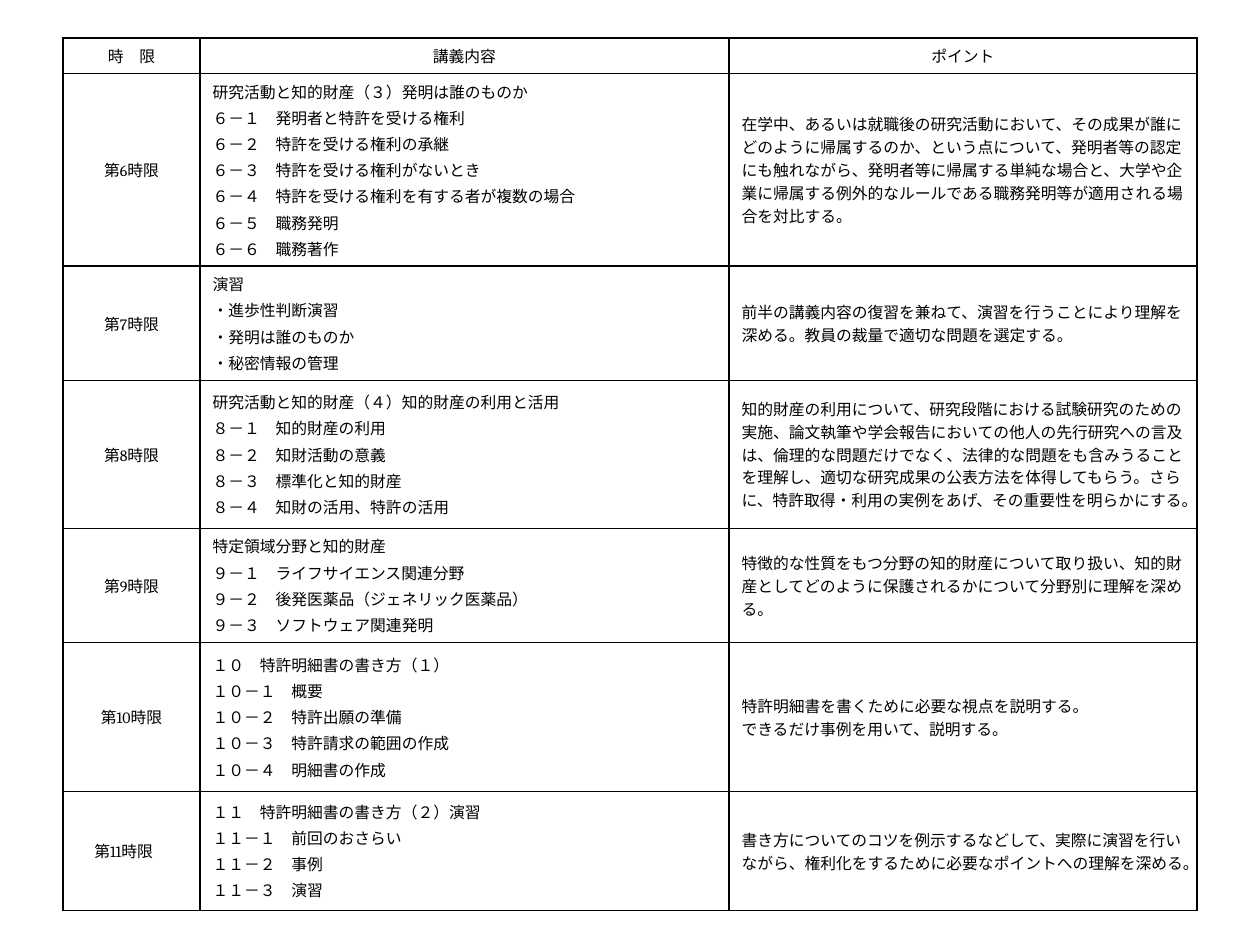
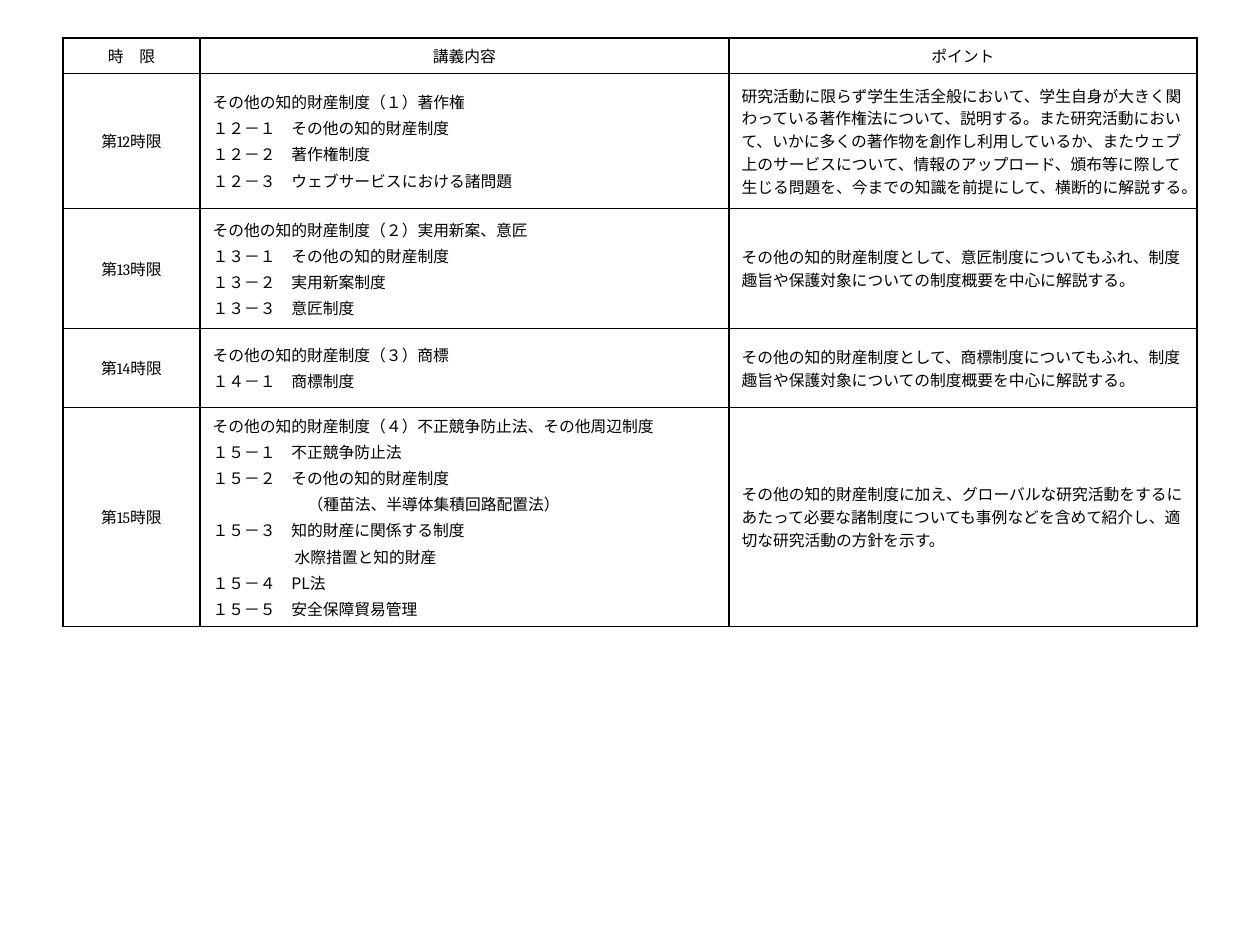
from dataclasses import dataclass

from lxml.etree import SubElement
from pptx import Presentation
from pptx.dml.color import RGBColor
from pptx.enum.lang import MSO_LANGUAGE_ID
from pptx.enum.text import MSO_ANCHOR, PP_ALIGN
from pptx.oxml.ns import qn
from pptx.slide import Slide
from pptx.table import _Cell
from pptx.util import Emu, Pt

SCALE = 914400 // 126
COLORS = {"ink": "000000", "rule": "000000"}
SERIF, SANS, ASIAN = "Cambria", "Calibri", "Noto Sans CJK JP"
SIZE = Pt(9)
GAP = Pt(1.9)
RULE = Pt(1)
HANG = 48
LEFT, TOP = 63, 38
COLS = (137, 529, 468)
HEAD = 35
TITLES = ("時　限", "講義内容", "ポイント")


@dataclass(frozen=True)
class Line:
    text: str
    inset: int = 0


@dataclass(frozen=True)
class Style:
    face: str
    align: PP_ALIGN = PP_ALIGN.LEFT
    hang: int = 0
    gap: Emu | None = None


@dataclass(frozen=True)
class Term:
    high: int
    name: str
    topics: tuple[str | Line, ...]
    points: tuple[str, ...]
    face: str = SANS


LABEL = Style(SERIF, PP_ALIGN.CENTER, HANG)
POINT = Style(SERIF)

FIRST = (
    Term(192, "第6時限", (
        "研究活動と知的財産（３）発明は誰のものか",
        "６－１　発明者と特許を受ける権利",
        "６－２　特許を受ける権利の承継",
        "６－３　特許を受ける権利がないとき",
        "６－４　特許を受ける権利を有する者が複数の場合",
        "６－５　職務発明",
        "６－６　職務著作",
    ), (
        "在学中、あるいは就職後の研究活動において、その成果が誰に"
        "どのように帰属するのか、という点について、発明者等の認定"
        "にも触れながら、発明者等に帰属する単純な場合と、大学や企"
        "業に帰属する例外的なルールである職務発明等が適用される場"
        "合を対比する。",
    )),
    Term(114, "第7時限", (
        "演習",
        "・進歩性判断演習",
        "・発明は誰のものか",
        "・秘密情報の管理",
    ), (
        "前半の講義内容の復習を兼ねて、演習を行うことにより理解を"
        "深める。教員の裁量で適切な問題を選定する。",
    )),
    Term(148, "第8時限", (
        "研究活動と知的財産（４）知的財産の利用と活用",
        "８－１　知的財産の利用",
        "８－２　知財活動の意義",
        "８－３　標準化と知的財産",
        "８－４　知財の活用、特許の活用",
    ), (
        "知的財産の利用について、研究段階における試験研究のための"
        "実施、論文執筆や学会報告においての他人の先行研究への言及"
        "は、倫理的な問題だけでなく、法律的な問題をも含みうること"
        "を理解し、適切な研究成果の公表方法を体得してもらう。さら"
        "に、特許取得・利用の実例をあげ、その重要性を明らかにする。",
    )),
    Term(114, "第9時限", (
        "特定領域分野と知的財産",
        "９－１　ライフサイエンス関連分野",
        "９－２　後発医薬品（ジェネリック医薬品）",
        "９－３　ソフトウェア関連発明",
    ), (
        "特徴的な性質をもつ分野の知的財産について取り扱い、知的財"
        "産としてどのように保護されるかについて分野別に理解を深め"
        "る。",
    )),
    Term(149, "第10時限", (
        "１０　特許明細書の書き方（１）",
        "１０－１　概要",
        "１０－２　特許出願の準備",
        "１０－３　特許請求の範囲の作成",
        "１０－４　明細書の作成",
    ), (
        "特許明細書を書くために必要な視点を説明する。",
        "できるだけ事例を用いて、説明する。",
    )),
    Term(119, "第11時限　", (
        "１１　特許明細書の書き方（２）演習",
        "１１－１　前回のおさらい",
        "１１－２　事例",
        "１１－３　演習",
    ), (
        "書き方についてのコツを例示するなどして、実際に演習を行い"
        "ながら、権利化をするために必要なポイントへの理解を深める。",
    )),
)

SECOND = (
    Term(135, "第12時限", (
        "その他の知的財産制度（１）著作権",
        "１２－１　その他の知的財産制度",
        "１２－２　著作権制度",
        "１２－３　ウェブサービスにおける諸問題",
    ), (
        "研究活動に限らず学生生活全般において、学生自身が大きく関"
        "わっている著作権法について、説明する。また研究活動におい"
        "て、いかに多くの著作物を創作し利用しているか、またウェブ"
        "上のサービスについて、情報のアップロード、頒布等に際して"
        "生じる問題を、今までの知識を前提にして、横断的に解説する。",
    )),
    Term(120, "第13時限", (
        "その他の知的財産制度（２）実用新案、意匠",
        "１３－１　その他の知的財産制度",
        "１３－２　実用新案制度",
        "１３－３　意匠制度",
    ), (
        "その他の知的財産制度として、意匠制度についてもふれ、制度"
        "趣旨や保護対象についての制度概要を中心に解説する。",
    )),
    Term(79, "第14時限", (
        "その他の知的財産制度（３）商標",
        "１４－１　商標制度",
    ), (
        "その他の知的財産制度として、商標制度についてもふれ、制度"
        "趣旨や保護対象についての制度概要を中心に解説する。",
    )),
    Term(219, "第15時限", (
        "その他の知的財産制度（４）不正競争防止法、その他周辺制度",
        "１５－１　不正競争防止法",
        "１５－２　その他の知的財産制度",
        Line("（種苗法、半導体集積回路配置法）", 95),
        "１５－３　知的財産に関係する制度",
        Line("水際措置と知的財産", 82),
        "１５－４　PL法",
        "１５－５　安全保障貿易管理",
    ), (
        "その他の知的財産制度に加え、グローバルな研究活動をするに"
        "あたって必要な諸制度についても事例などを含めて紹介し、適"
        "切な研究活動の方針を示す。",
    ), ASIAN),
)


def px(count: int) -> Emu:
    return Emu(count * SCALE)


def frame(cell: _Cell) -> None:
    props = cell._tc.get_or_add_tcPr()
    for side in "LRTB":
        edge = SubElement(props, qn(f"a:ln{side}"), w=str(RULE))
        fill = SubElement(edge, qn("a:solidFill"))
        SubElement(fill, qn("a:srgbClr"), val=COLORS["rule"])
    cell.fill.background()


def write(cell: _Cell, lines: tuple[str | Line, ...], style: Style) -> None:
    cell.vertical_anchor = MSO_ANCHOR.MIDDLE
    body = cell.text_frame
    for index, item in enumerate(lines):
        line = item if isinstance(item, Line) else Line(item)
        para = body.add_paragraph() if index else body.paragraphs[0]
        para.alignment = style.align
        if style.gap is not None:
            para.space_before = style.gap
        props = para._p.get_or_add_pPr()
        props.set("marL", str(px(line.inset or style.hang)))
        props.set("indent", str(px(0 if line.inset else -style.hang)))
        run = para.add_run()
        run.text = line.text
        font = run.font
        font.size = SIZE
        font.name = style.face
        font.language_id = MSO_LANGUAGE_ID.JAPANESE
        font.color.rgb = RGBColor.from_string(COLORS["ink"])
        SubElement(run._r.get_or_add_rPr(), qn("a:ea"), typeface=ASIAN)


def draw(slide: Slide, terms: tuple[Term, ...]) -> None:
    highs = (HEAD, *(term.high for term in terms))
    grid = slide.shapes.add_table(
        len(highs), len(COLS), px(LEFT), px(TOP), px(sum(COLS)), px(sum(highs))
    ).table
    grid.first_row = grid.horz_banding = False
    for col, wide in zip(grid.columns, COLS):
        col.width = px(wide)
    for row, high in zip(grid.rows, highs):
        row.height = px(high)
    for cell in grid.iter_cells():
        frame(cell)
    for col, title in enumerate(TITLES):
        write(grid.cell(0, col), (title,), LABEL)
    for row, term in enumerate(terms, 1):
        topic = Style(term.face, hang=HANG, gap=GAP)
        write(grid.cell(row, 0), (term.name,), LABEL)
        write(grid.cell(row, 1), term.topics, topic)
        write(grid.cell(row, 2), term.points, POINT)


def main() -> None:
    deck = Presentation()
    deck.slide_width, deck.slide_height = px(1260), px(945)
    for terms in (FIRST, SECOND):
        draw(deck.slides.add_slide(deck.slide_layouts[6]), terms)
    deck.save("out.pptx")


if __name__ == "__main__":
    main()
